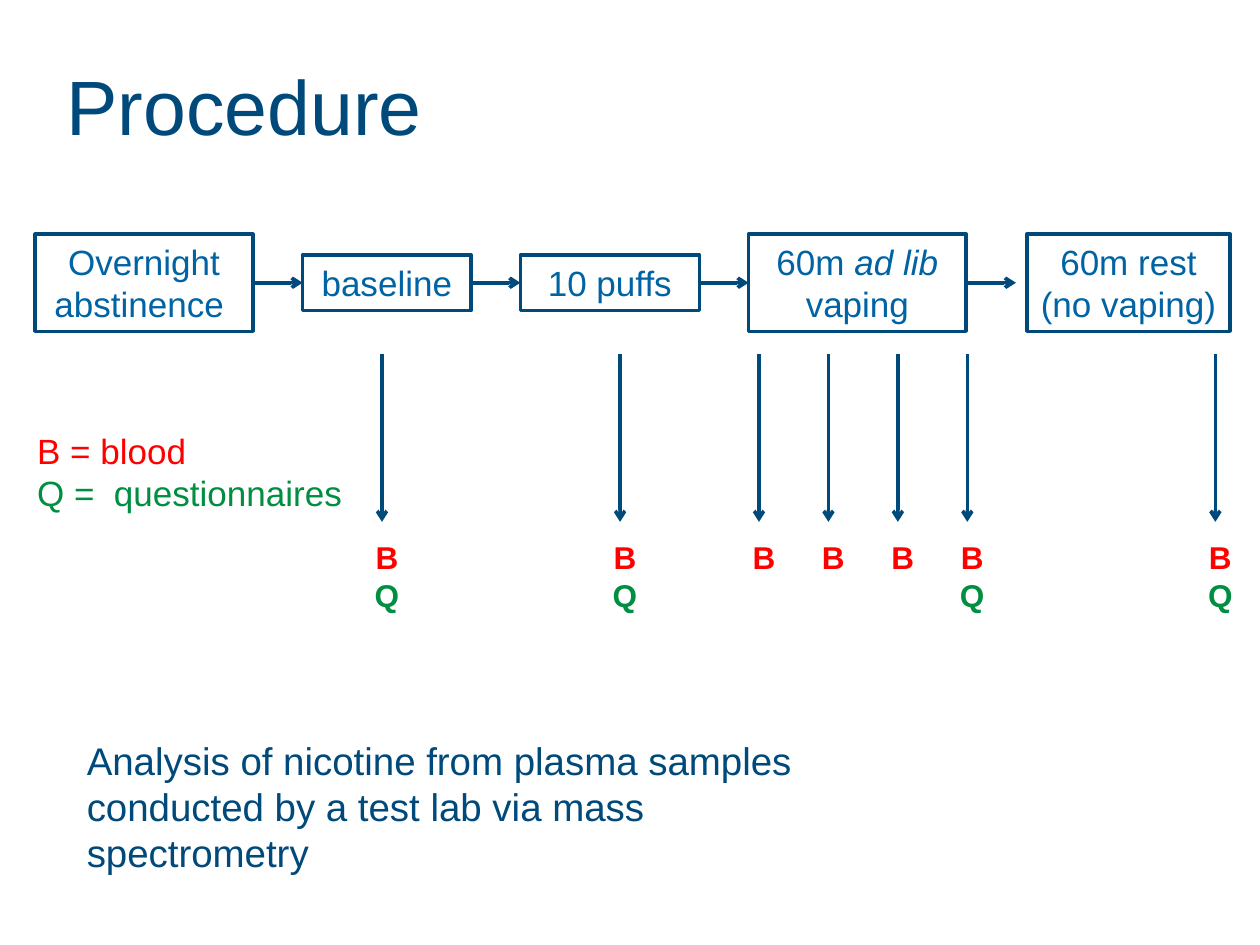
"""Build the study procedure slide: a row of stages with sampling points below."""
from dataclasses import dataclass

from lxml.etree import SubElement
from pptx import Presentation
from pptx.dml.color import RGBColor
from pptx.enum.shapes import MSO_CONNECTOR, MSO_SHAPE
from pptx.enum.text import MSO_ANCHOR, PP_ALIGN
from pptx.oxml.ns import qn
from pptx.util import Cm, Pt


@dataclass(frozen=True)
class Theme:
    font: str = "Arial"
    navy: str = "004A7B"
    blue: str = "0063A4"
    red: str = "FF0000"
    green: str = "008E40"
    title: int = 44
    note: int = 22
    body: int = 20
    label: int = 18
    line: int = 2


theme = Theme()


def write(frame, text, *, size, colors, bold=False, align=PP_ALIGN.LEFT, anchor=MSO_ANCHOR.TOP):
    """Fill a frame, one colour per line; words between asterisks are italic."""
    frame.word_wrap = True
    frame.vertical_anchor = anchor
    for number, (line, color) in enumerate(zip(text.split("\n"), colors)):
        para = frame.add_paragraph() if number else frame.paragraphs[0]
        para.alignment = align
        for index, words in enumerate(line.split("*")):
            span = para.add_run()
            span.text = words
            span.font.name = theme.font
            span.font.size = Pt(size)
            span.font.bold = bold
            span.font.italic = index % 2 == 1
            span.font.color.rgb = RGBColor.from_string(color)


def draw_arrow(page, start_x, start_y, end_x, end_y):
    """Add a straight arrow with an open head at its end."""
    arrow = page.shapes.add_connector(
        MSO_CONNECTOR.STRAIGHT, Cm(start_x), Cm(start_y), Cm(end_x), Cm(end_y))
    arrow.line.color.rgb = RGBColor.from_string(theme.navy)
    arrow.line.width = Pt(theme.line)
    SubElement(arrow.line._get_or_add_ln(), qn("a:tailEnd"), type="arrow")
    SubElement(arrow._element.spPr, qn("a:effectLst"))
    return arrow


deck = Presentation()
deck.slide_width, deck.slide_height = Cm(25.4), Cm(19.05)
page = deck.slides.add_slide(deck.slide_layouts[6])

title = page.shapes.add_textbox(Cm(1.09), Cm(0.53), Cm(22.86), Cm(3.18))
write(title.text_frame, "Procedure", size=theme.title, colors=[theme.navy],
      anchor=MSO_ANCHOR.MIDDLE)

middle = 5.7
stages = [
    ("Overnight abstinence ", 0.71, 4.39, 1.96),
    ("baseline", 6.1, 3.4, 1.12),
    ("10 puffs", 10.49, 3.61, 1.12),
    ("60m *ad lib *vaping", 15.09, 4.39, 1.96),
    ("60m rest (no vaping)", 20.7, 4.1, 1.96),
]
boxes = []
for text, left, width, height in stages:
    box = page.shapes.add_shape(
        MSO_SHAPE.RECTANGLE, Cm(left), Cm(middle - height / 2), Cm(width), Cm(height))
    box.shadow.inherit = False
    box.fill.background()
    box.line.color.rgb = RGBColor.from_string(theme.navy)
    box.line.width = Pt(theme.line)
    write(box.text_frame, text, size=theme.body, colors=[theme.blue], align=PP_ALIGN.CENTER)
    boxes.append(box)

gap = 1
for number, (text, left, width, height) in enumerate(stages[:-1]):
    right = left + width
    arrow = draw_arrow(page, right, middle, right + gap, middle)
    arrow.begin_connect(boxes[number], 3)
    if number < len(stages) - 2:
        arrow.end_connect(boxes[number + 1], 1)

legend = page.shapes.add_textbox(Cm(0.5), Cm(8.53), Cm(8), Cm(1.96))
write(legend.text_frame, "B = blood\nQ =  questionnaires", size=theme.body,
      colors=[theme.red, theme.green])

vaping_start, vaping_step = 15.3, 1.4
samples = [(7.7, "B\nQ", 2.59), (12.5, "B\nQ", 2.59)]
samples += [(vaping_start + vaping_step * number, "B", 1.8) for number in range(3)]
samples += [(vaping_start + vaping_step * 3, "B\nQ", 1.8), (24.5, "B\nQ", 2.59)]
for x, text, width in samples:
    draw_arrow(page, x, 7.14, x, 10.52)
    height = 1.8 if "\n" in text else 1.02
    label = page.shapes.add_textbox(
        Cm(x + 0.1 - width / 2), Cm(10.72), Cm(width), Cm(height))
    write(label.text_frame, text, size=theme.label, colors=[theme.red, theme.green],
          bold=True, align=PP_ALIGN.CENTER)

note = page.shapes.add_textbox(Cm(1.5), Cm(14.73), Cm(16.4), Cm(3.07))
write(note.text_frame,
      "Analysis of nicotine from plasma samples conducted by a test lab via mass spectrometry",
      size=theme.note, colors=[theme.navy])

deck.save("out.pptx")
